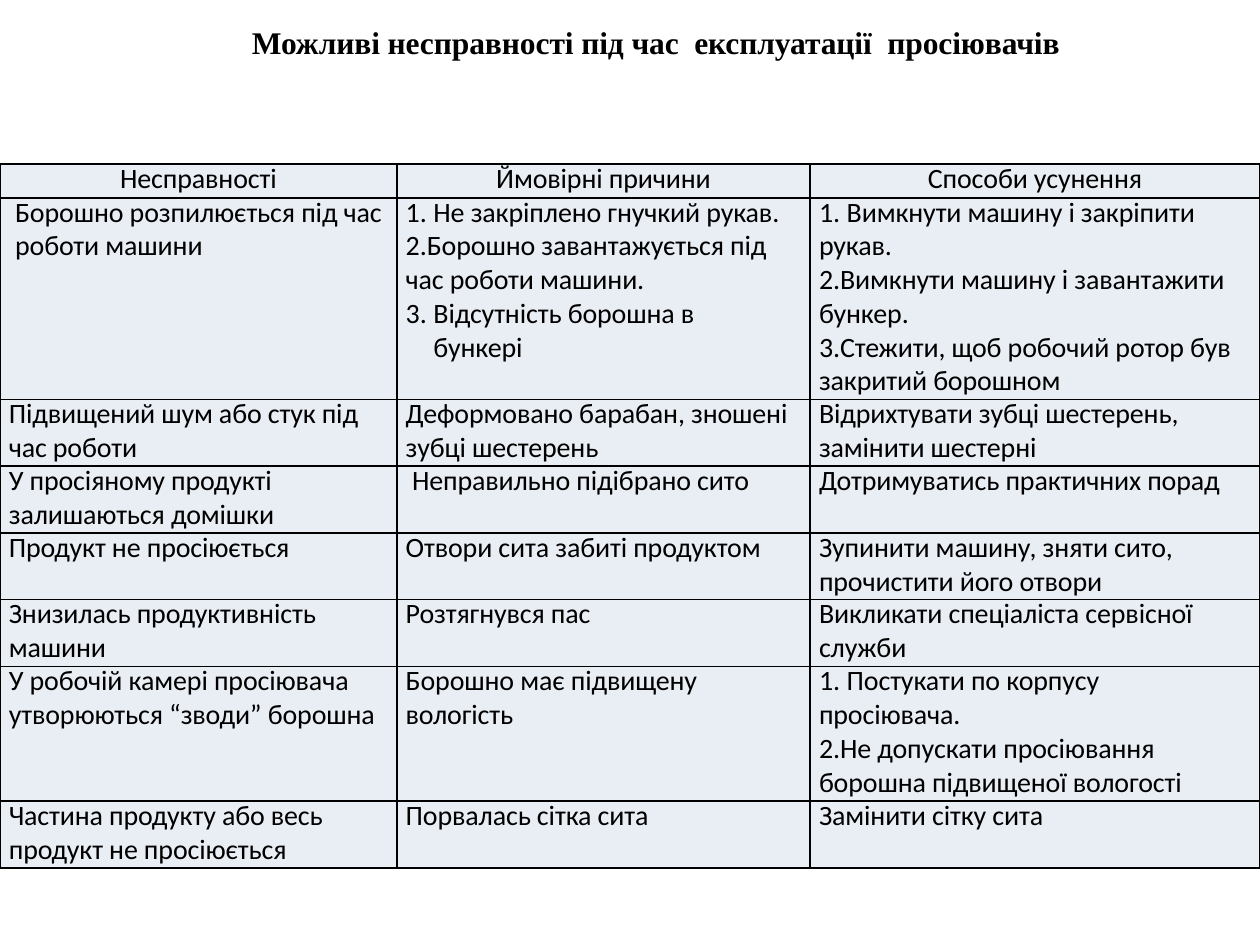
from lxml.etree import SubElement
from pptx import Presentation
from pptx.dml.color import RGBColor
from pptx.enum.text import PP_ALIGN
from pptx.oxml.ns import qn
from pptx.util import Inches, Pt

WIDTH, HEIGHT = 10, 7.5
INK, CELL_FILL = "000000", "E9EDF4"
COLUMNS = [3.15, 3.28, 3.57]
ROWS = [0.27, 1.6, 0.53, 0.53, 0.53, 0.53, 1.07, 0.53]
INDENT, WIDE_INDENT, HANG = 0.07, 0.12, 0.22
WIDE_CELLS = {(1, 0), (3, 1)}
TITLE = "Можливі несправності під час  експлуатації  просіювачів"

# One paragraph per line; "1. text" hangs after its number, "2.text" sits close to it.
FAULTS = [
    ["Несправності", "Ймовірні причини", "Способи усунення"],
    ["Борошно розпилюється під час\nроботи машини",
     "1. Не закріплено гнучкий рукав.\n"
     "2.Борошно завантажується під час роботи машини.\n"
     "3. Відсутність борошна в бункері",
     "1. Вимкнути машину і закріпити\nрукав.\n"
     "2.Вимкнути машину і завантажити бункер.\n"
     "3.Стежити, щоб робочий ротор був закритий борошном"],
    ["Підвищений шум або стук під\nчас роботи",
     "Деформовано барабан, зношені\nзубці шестерень",
     "Відрихтувати зубці шестерень,\nзамінити шестерні"],
    ["У просіяному продукті\nзалишаються домішки",
     "Неправильно підібрано сито",
     "Дотримуватись практичних порад"],
    ["Продукт не просіюється",
     "Отвори сита забиті продуктом",
     "Зупинити машину, зняти сито,\nпрочистити його отвори"],
    ["Знизилась продуктивність\nмашини",
     "Розтягнувся пас",
     "Викликати спеціаліста сервісної\nслужби"],
    ["У робочій камері просіювача\nутворюються “зводи” борошна",
     "Борошно має підвищену\nвологість",
     "1. Постукати по корпусу\nпросіювача.\n"
     "2.Не допускати просіювання борошна підвищеної вологості"],
    ["Частина продукту або весь\nпродукт не просіюється",
     "Порвалась сітка сита",
     "Замінити сітку сита"],
]


def color(hex_code):
    return RGBColor.from_string(hex_code)


def add_run(paragraph, text, font, size, bold=False):
    run = paragraph.add_run()
    run.text = text
    run.font.name, run.font.size, run.font.bold = font, Pt(size), bold
    run.font.color.rgb = color(INK)
    run.font._element.set("spc", "-5")


def clear_margins(frame):
    frame.margin_left = frame.margin_right = 0
    frame.margin_top = frame.margin_bottom = 0


def indent(paragraph, left, first=0, right=0):
    props = paragraph._p.get_or_add_pPr()
    for name, length in (("marL", left), ("marR", right), ("indent", first)):
        props.set(name, str(Inches(length)))
    return props


def style_cell(cell):
    clear_margins(cell)
    props = cell._tc.get_or_add_tcPr()
    for side in ("lnL", "lnR", "lnT", "lnB"):
        border = SubElement(props, qn(f"a:{side}"), w=str(Pt(1)))
        fill = SubElement(border, qn("a:solidFill"))
        SubElement(fill, qn("a:srgbClr"), val=INK)
    cell.fill.solid()
    cell.fill.fore_color.rgb = color(CELL_FILL)


def fill_cell(cell, content, left, header):
    frame = cell.text_frame
    in_list = False
    for i, line in enumerate(content.split("\n")):
        paragraph = frame.add_paragraph() if i else frame.paragraphs[0]
        paragraph.line_spacing = Pt(19.3 if i else 18.2)
        numbered = line[0].isdigit()
        if numbered:
            number, line = line.split(".", 1)
            hang = HANG if line.startswith(" ") else 0
            props = indent(paragraph, INDENT + hang, -hang, 0.2)
            bullet = SubElement(props, qn("a:buAutoNum"), type="arabicPeriod")
            if not in_list and number != "1":
                bullet.set("startAt", number)
        elif header:
            paragraph.alignment = PP_ALIGN.CENTER
        else:
            indent(paragraph, left)
        in_list = numbered
        add_run(paragraph, line.strip(), "Calibri", 16)


def add_title(slide, left, top, width, height):
    box = slide.shapes.add_textbox(*map(Inches, (left, top, width, height)))
    frame = box.text_frame
    frame.word_wrap = True
    clear_margins(frame)
    add_run(frame.paragraphs[0], TITLE, "Times New Roman", 18, bold=True)


def add_fault_table(slide, left, top):
    size = sum(COLUMNS), sum(ROWS)
    table = slide.shapes.add_table(
        len(ROWS), len(COLUMNS), *map(Inches, (left, top, *size))).table
    table.first_row = table.horz_banding = False
    for column, width in zip(table.columns, COLUMNS):
        column.width = Inches(width)
    for r, (row, height) in enumerate(zip(table.rows, ROWS)):
        row.height = Inches(height)
        for c, cell in enumerate(row.cells):
            style_cell(cell)
            left_indent = WIDE_INDENT if (r, c) in WIDE_CELLS else INDENT
            fill_cell(cell, FAULTS[r][c], left_indent, header=r == 0)


def main():
    deck = Presentation()
    deck.slide_width, deck.slide_height = Inches(WIDTH), Inches(HEIGHT)
    slide = deck.slides.add_slide(deck.slide_layouts[6])
    add_fault_table(slide, 0, 1.3)
    add_title(slide, WIDTH * 0.2, 0.18, WIDTH * 0.65, 0.33)
    deck.save("out.pptx")


if __name__ == "__main__":
    main()
